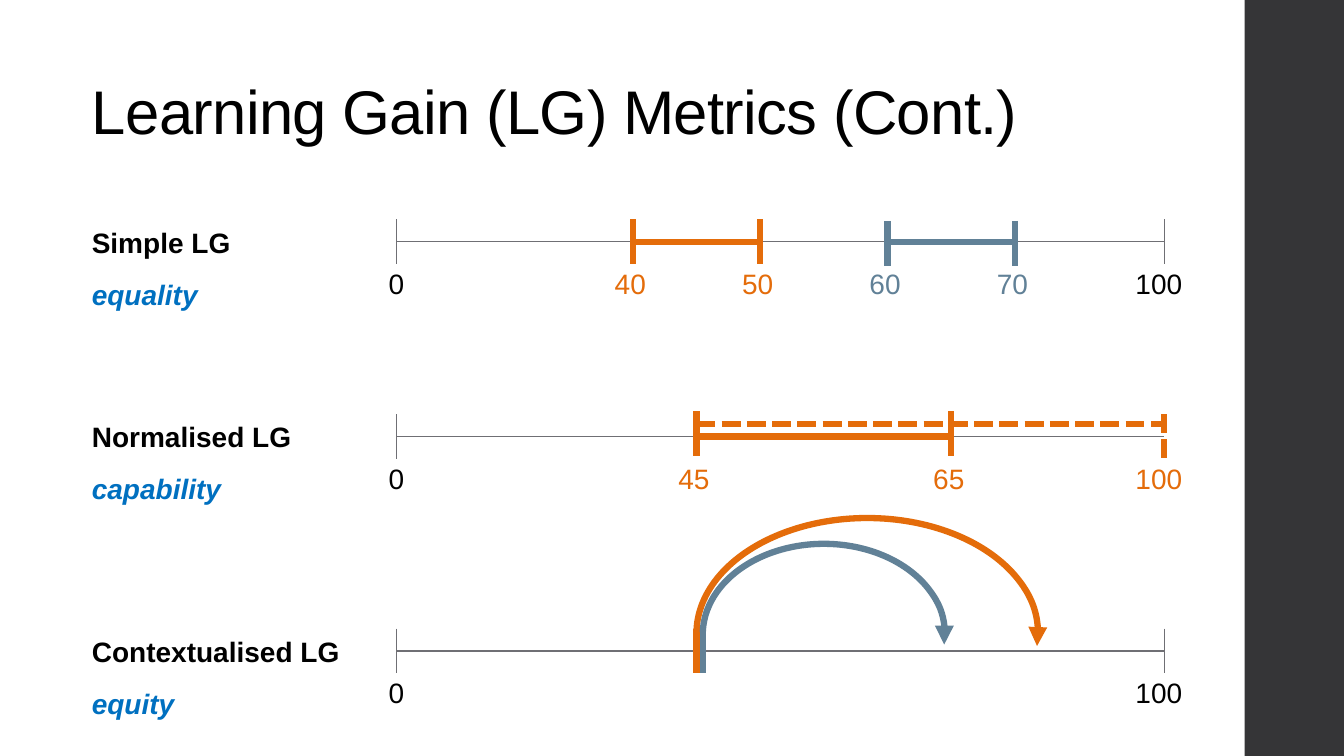
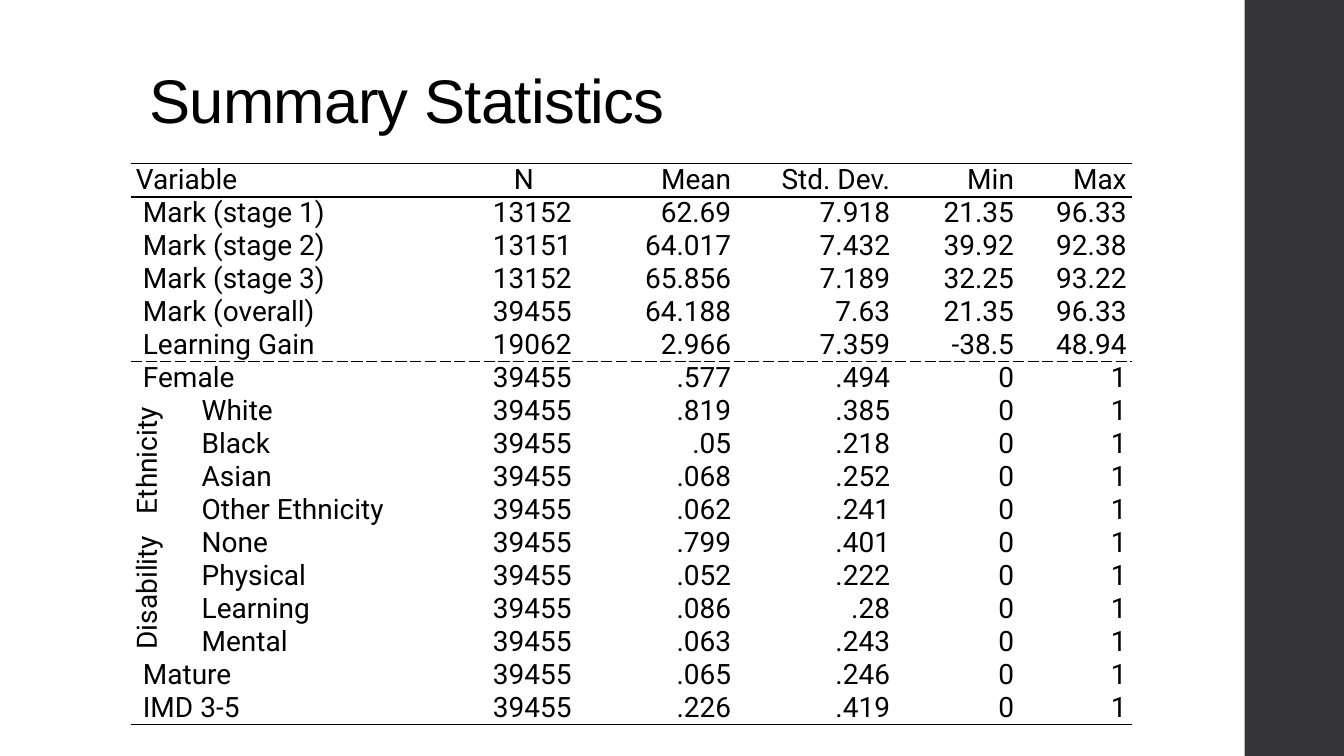
import pptx
import pptx.dml.color
import pptx.enum.dml
import pptx.enum.shapes
import pptx.enum.text
import pptx.oxml.ns
import pptx.util
from lxml import etree

Pt = pptx.util.Pt
qn = pptx.oxml.ns.qn
Align = pptx.enum.text.PP_ALIGN
Shape = pptx.enum.shapes.MSO_SHAPE

BLACK, GREY, BAND = "000000", "6F6F74", "353537"
ORANGE, SLATE, BLUE = "E46C0A", "618197", "0070C0"
HEAD_FONT, TABLE_FONT = "Arial", "Roboto"
THIN, THICK = 0.75, 4.5
TICK = 16          # half the height of a tick on a scale
NO_STYLE = "{2D5ABB26-0587-4C30-8999-92F81FD0307C}"

HEADER = ("Variable", "N", "Mean", "Std. Dev.", "Min", "Max")
STATISTICS = [
    ("Mark (stage 1)", "13152", "62.69", "7.918", "21.35", "96.33"),
    ("Mark (stage 2)", "13151", "64.017", "7.432", "39.92", "92.38"),
    ("Mark (stage 3)", "13152", "65.856", "7.189", "32.25", "93.22"),
    ("Mark (overall)", "39455", "64.188", "7.63", "21.35", "96.33"),
    ("Learning Gain", "19062", "2.966", "7.359", "-38.5", "48.94"),
    ("Female", "39455", ".577", ".494", "0", "1"),
    ("White", "39455", ".819", ".385", "0", "1"),
    ("Black", "39455", ".05", ".218", "0", "1"),
    ("Asian", "39455", ".068", ".252", "0", "1"),
    ("Other Ethnicity", "39455", ".062", ".241", "0", "1"),
    ("None", "39455", ".799", ".401", "0", "1"),
    ("Physical", "39455", ".052", ".222", "0", "1"),
    ("Learning", "39455", ".086", ".28", "0", "1"),
    ("Mental", "39455", ".063", ".243", "0", "1"),
    ("Mature", "39455", ".065", ".246", "0", "1"),
    ("IMD 3-5", "39455", ".226", ".419", "0", "1"),
]
GROUPS = {7: "Ethnicity", 11: "Disability"}   # first row of each group
GROUP_SIZE = 4
RULES = {0: (1, "solid"), 1: (1.5, "solid"), 6: (1, "sysDash"), 17: (1, "solid")}
COLUMNS = (42, 201, 75.5, 114, 113.5, 88.5, 80.5)
ROW_HEIGHT = 23.57


def colour(value):
    return pptx.dml.color.RGBColor.from_string(value)


def add_span(para, text, size, font, ink, bold=None, italic=None):
    span = para.add_run()
    span.text = text
    span.font.size, span.font.name = Pt(size), font
    span.font.bold, span.font.italic = bold, italic
    span.font.color.rgb = colour(ink)
    return span


def add_text_box(page, left, top, width, height):
    frame = page.shapes.add_textbox(Pt(left), Pt(top), Pt(width), Pt(height)).text_frame
    frame.word_wrap = True
    return frame


def add_line(page, start, end, ink=GREY, weight=THIN, dashed=False):
    line = page.shapes.add_connector(
        pptx.enum.shapes.MSO_CONNECTOR.STRAIGHT, *map(Pt, start + end))
    line.line.color.rgb = colour(ink)
    line.line.width = Pt(weight)
    if dashed:
        line.line.dash_style = pptx.enum.dml.MSO_LINE.SQUARE_DOT
    etree.SubElement(line.element.spPr, qn("a:effectLst"))


def add_page(deck, title, left, height):
    page = deck.slides.add_slide(deck.slide_layouts[5])
    box = page.shapes.title
    box.left, box.top, box.width, box.height = Pt(left), Pt(28.8), Pt(763), Pt(height)
    frame = box.text_frame
    frame.auto_size = pptx.enum.text.MSO_AUTO_SIZE.NONE
    frame.vertical_anchor = pptx.enum.text.MSO_ANCHOR.BOTTOM
    para = frame.paragraphs[0]
    para.alignment, para.line_spacing = Align.LEFT, 0.9
    span = add_span(para, title, 44, HEAD_FONT, BLACK)
    span.font.element.set("spc", "-50") if hasattr(span.font, "element") else None
    return page


def add_master_band(deck, page):
    """Draw the side band on a page, then move it to the back of the master."""
    band = page.shapes.add_shape(Shape.RECTANGLE, Pt(889), 0, Pt(72), deck.slide_height)
    band.left = deck.slide_width - band.width + Pt(1)
    band.width = deck.slide_width - band.left
    band.shadow.inherit = False
    band.fill.solid()
    band.fill.fore_color.rgb = colour(BAND)
    band.line.fill.background()
    band.element.find(".//" + qn("p:cNvPr")).set("id", "20")
    deck.slide_master.shapes.element.insert(2, band.element)


class Scale:
    """A 0 to 100 axis with a caption; marks from 40 up are evenly spaced."""

    def __init__(self, page, left, middle, width):
        self.page, self.left, self.middle, self.right = page, left, middle, left + width
        add_line(page, (left, middle), (self.right, middle))
        self.tick(0)
        self.label(0)

    def place(self, value):
        ends = {0: self.left, 100: self.right}
        return ends.get(value, self.left + 169 + (value - 40) * 9.1)

    def caption(self, name, principle):
        frame = add_text_box(self.page, self.left - 224.5, self.middle - 15.5, 197, 67.5)
        add_span(frame.paragraphs[0], name, 20, HEAD_FONT, BLACK, bold=True)
        para = frame.add_paragraph()
        para.space_before = Pt(13)
        add_span(para, principle, 20, HEAD_FONT, BLUE, bold=True, italic=True)

    def tick(self, value, ink=GREY, weight=THIN, dashed=False, right=0, down=0):
        x, y = self.place(value) + right, self.middle + down
        add_line(self.page, (x, y - TICK), (x, y + TICK), ink, weight, dashed)

    def label(self, value, ink=BLACK):
        text = str(value)
        left = self.place(value) - 5 - 7.5 * len(text)
        frame = add_text_box(self.page, left, self.middle + 14, 53, 31.5)
        add_span(frame.paragraphs[0], text, 20, HEAD_FONT, ink)

    def bar(self, first, last, ink, dashed=False, down=0):
        y = self.middle + down
        add_line(self.page, (self.place(first), y), (self.place(last), y),
                 ink, THICK, dashed)

    def interval(self, first, last, ink, down=0):
        self.bar(first, last, ink)
        for value in (first, last):
            self.tick(value, ink, THICK, down=down)
            self.label(value, ink)

    def leap(self, value, ink, right, rise, width, height, end):
        """An arched arrow that starts at a mark; end is its last angle."""
        arc = self.page.shapes.add_shape(
            Shape.ARC, Pt(self.place(value) + right), Pt(self.middle - rise),
            Pt(width), Pt(height))
        arc.adjustments[0], arc.adjustments[1] = 181 * 0.6, end * 0.6
        arc.shadow.inherit = False
        arc.fill.background()
        arc.line.color.rgb = colour(ink)
        arc.line.width = Pt(THICK)
        outline = arc.element.spPr.find(qn("a:ln"))
        etree.SubElement(outline, qn("a:tailEnd"), type="triangle")
        self.tick(value, ink, THICK, right=right)


def add_metrics(page, left, width):
    simple, normalised, contextual = (
        Scale(page, left, middle, width) for middle in (172.8, 311.8, 465))

    simple.caption("Simple LG", "equality")
    simple.tick(100)
    simple.label(100)
    simple.interval(40, 50, ORANGE)
    simple.interval(60, 70, SLATE, down=1)

    normalised.caption("Normalised LG", "capability")
    normalised.tick(100, ORANGE, THICK, dashed=True)
    normalised.label(100, ORANGE)
    normalised.interval(45, 65, ORANGE, down=-2)
    normalised.bar(45, 100, ORANGE, dashed=True, down=-9)

    contextual.caption("Contextualised LG", "equity")
    contextual.tick(100)
    contextual.label(100)
    contextual.leap(45, ORANGE, 0, 95, 244, 165, 4.2)
    contextual.leap(45, SLATE, 4.5, 76.5, 173, 129.5, 4.8)


def add_border(properties, side, rule):
    weight, dash = rule or (0, None)
    line = etree.SubElement(properties, qn("a:ln" + side), w=str(Pt(weight)))
    if not rule:
        etree.SubElement(line, qn("a:noFill"))
        return
    fill = etree.SubElement(line, qn("a:solidFill"))
    etree.SubElement(fill, qn("a:srgbClr"), val=BLACK)
    etree.SubElement(line, qn("a:prstDash"), val=dash)


def fill_cell(cell, text, align, indent=0):
    cell.margin_left, cell.margin_right = Pt(3.6 + indent), Pt(3.6)
    cell.margin_top = cell.margin_bottom = 0
    para = cell.text_frame.paragraphs[0]
    para.alignment = align
    add_span(para, text, 20, TABLE_FONT, BLACK)


def add_statistics(page, left, top):
    records = [HEADER] + STATISTICS
    frame = page.shapes.add_table(
        len(records), len(COLUMNS), Pt(left), Pt(top),
        Pt(sum(COLUMNS)), Pt(ROW_HEIGHT * len(records)))
    table = frame.table
    table.first_row = table.horz_banding = False
    frame.element.find(".//" + qn("a:tableStyleId")).text = NO_STYLE
    for column, width in zip(table.columns, COLUMNS):
        column.width = Pt(width)

    grouped = set()
    for first, name in GROUPS.items():
        grouped.update(range(first, first + GROUP_SIZE))
        table.cell(first, 0).merge(table.cell(first + GROUP_SIZE - 1, 0))
        fill_cell(table.cell(first, 0), name, Align.CENTER)

    for index, (name, *values) in enumerate(records):
        table.rows[index].height = Pt(ROW_HEIGHT)
        if index not in grouped:
            table.cell(index, 0).merge(table.cell(index, 1))
        fill_cell(table.cell(index, int(index in grouped)), name, Align.LEFT,
                  indent=5 if index else 0)
        for column, value in enumerate(values, 2):
            centred = index == 0 and column == 2
            fill_cell(table.cell(index, column), value,
                      Align.CENTER if centred else Align.RIGHT)

    elements = frame.element.iter(qn("a:tc"))
    for position, (cell, element) in enumerate(zip(table.iter_cells(), elements)):
        row, column = divmod(position, len(COLUMNS))
        properties = element.get_or_add_tcPr()
        for side, rule in zip("LRTB", (None, None, RULES.get(row), RULES.get(row + 1))):
            add_border(properties, side, rule)
        cell.fill.background()
        if column == 0 and row in GROUPS:
            properties.set("vert", "vert270")


def tighten_titles(deck):
    """Set the letter spacing of every title."""
    for page in deck.slides:
        for properties in page.shapes.title.element.iter(qn("a:rPr")):
            properties.set("spc", "-50")


def main():
    deck = pptx.Presentation()
    deck.slide_width, deck.slide_height = Pt(960), Pt(540)

    metrics = add_page(deck, "Learning Gain (LG) Metrics (Cont.)", 58.5, 80.5)
    add_master_band(deck, metrics)
    add_metrics(metrics, 283, 548.5)

    summary = add_page(deck, "Summary Statistics", 99.5, 72.5)
    add_statistics(summary, 93.5, 117)

    tighten_titles(deck)
    deck.save("out.pptx")


if __name__ == "__main__":
    main()
